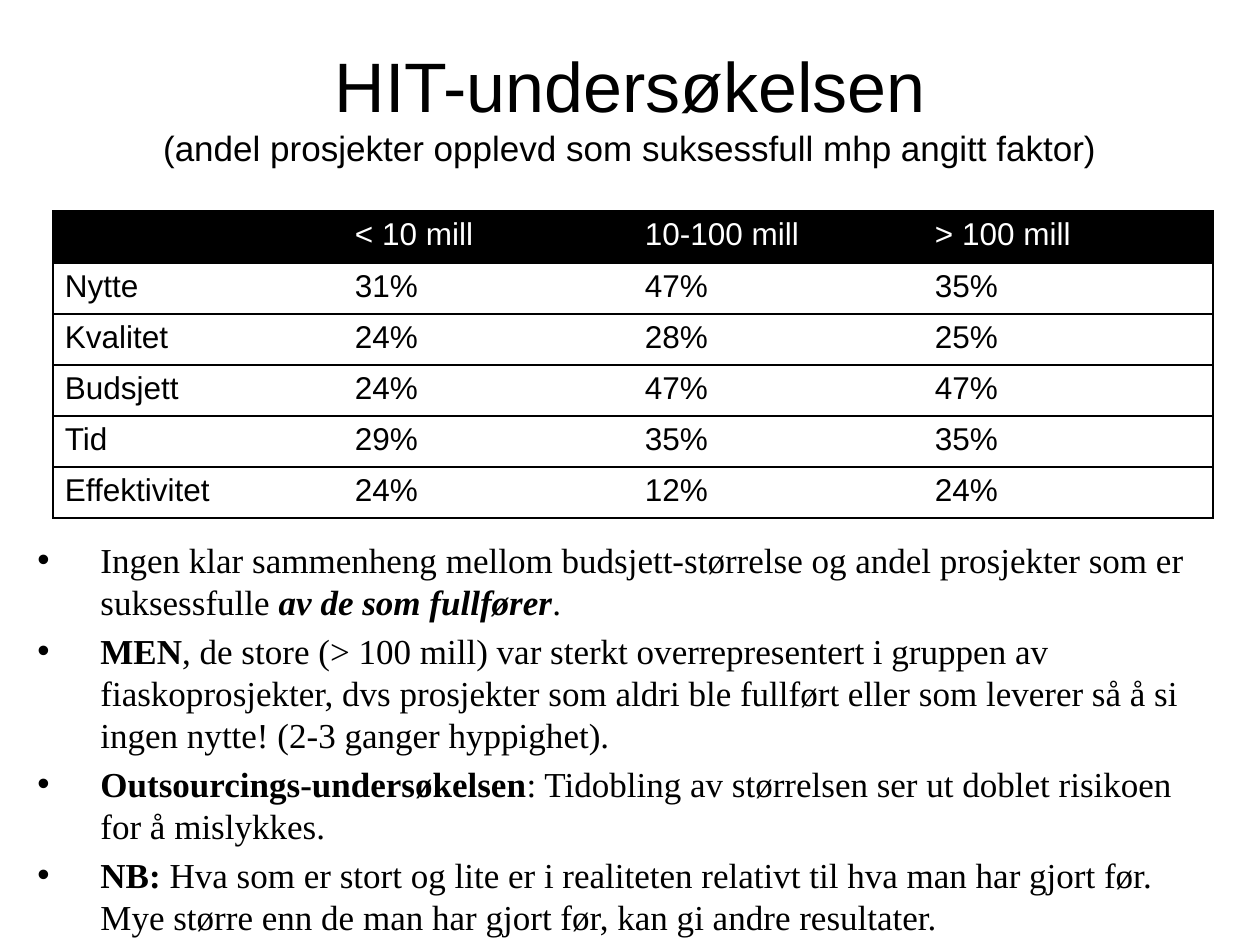
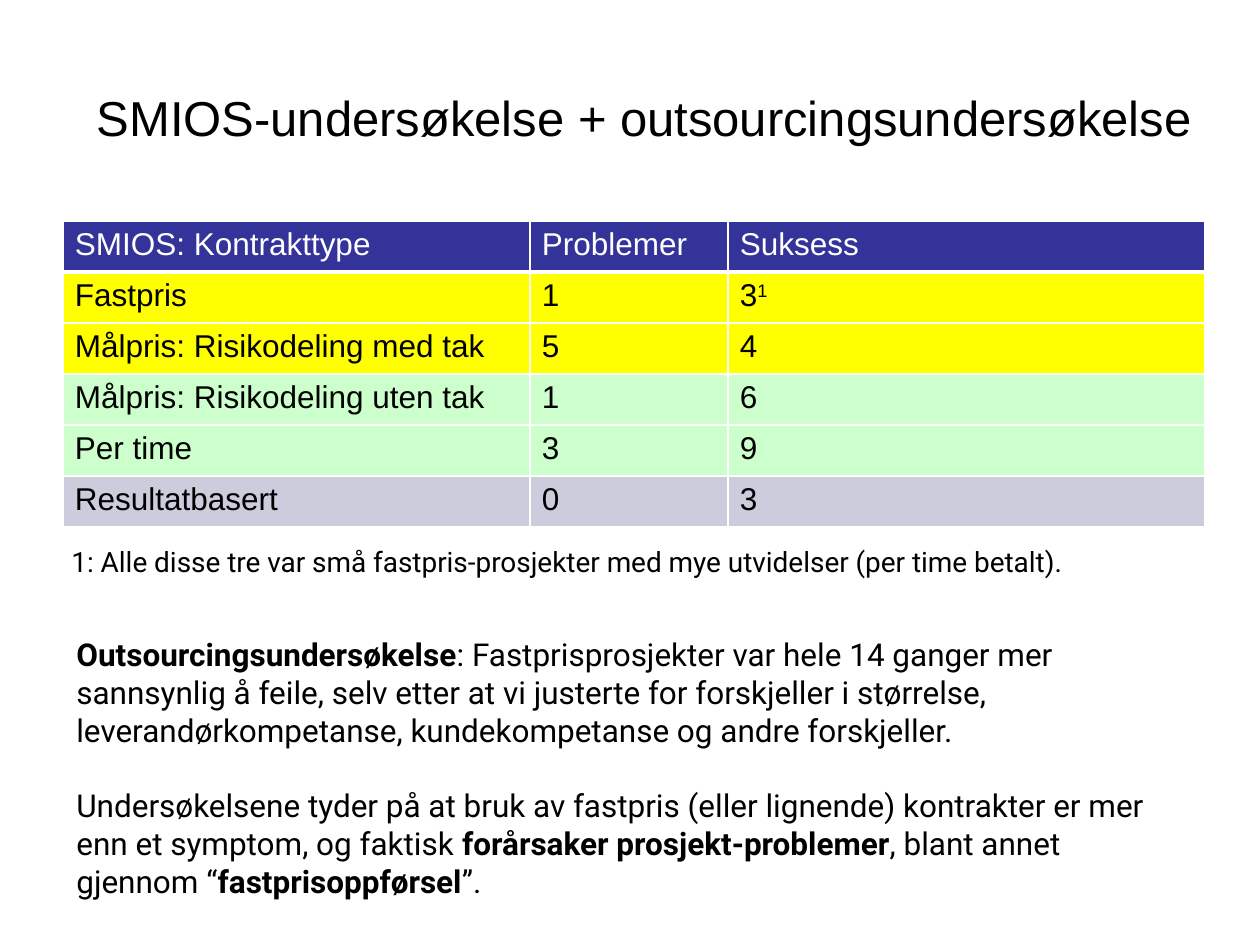
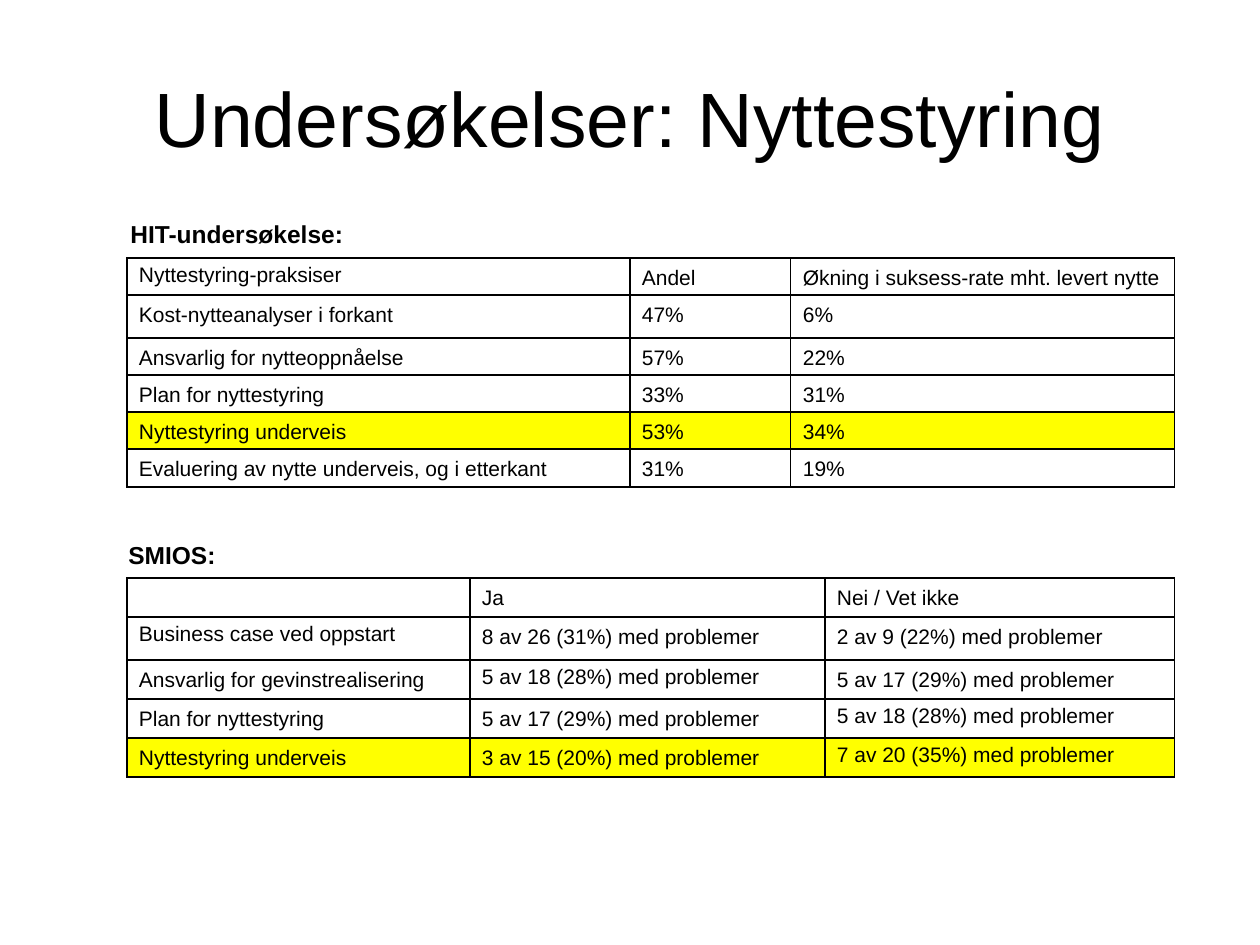
"""Build three slides of survey results on project success."""
import lxml.etree
import pptx
import pptx.dml.color
import pptx.enum.text
import pptx.oxml.ns
import pptx.util

SCALE = 914400 / 126
COLS = {"ink": "000000", "paper": "FFFFFF", "blue": "333399",
        "sun": "FFFF00", "mint": "CCFFCC", "mist": "CCCCDD"}
BOLD = {"bold": True}
BODY = {"name": "Times New Roman", "size": 20}
NOTE = {"name": "Roboto", "size": 18}
GRID = {"name": "Arial", "size": 18}
SMALL = {"name": "Arial", "size": 12}
HEAD = {"name": "Arial", "size": 14, "bold": True}
SIDES = {"l": "a:lnL", "r": "a:lnR", "t": "a:lnT", "b": "a:lnB"}


def px(num):
    """Turn pixels into EMU."""
    return pptx.util.Emu(round(num * SCALE))


def rgb(name):
    """Look up a named colour."""
    return pptx.dml.color.RGBColor.from_string(COLS[name])


def node(root, tag, **vals):
    """Add an XML child with attributes."""
    return lxml.etree.SubElement(root, pptx.oxml.ns.qn(tag), vals)


def assign(item, vals):
    """Set attributes from a dict."""
    for key, val in vals.items():
        setattr(item, key, val)


def write(par, parts, base, ink="ink"):
    """Write a string or a list of (text, format) parts as runs."""
    if isinstance(parts, str):
        parts = [(parts, {})]
    for text, extra in parts:
        if text == "\n":
            par.add_line_break()
            continue
        run = par.add_run()
        run.text = text
        look = {**base, **extra}
        assign(run.font, {**look, "size": pptx.util.Pt(look["size"])})
        run.font.color.rgb = rgb(ink)


def place(shape, box):
    """Move and size a shape."""
    assign(shape, dict(zip(("left", "top", "width", "height"), map(px, box))))


def start(deck, box, parts, size):
    """Add a slide with a formatted title."""
    slide = deck.slides.add_slide(deck.slide_layouts[5])
    title = slide.shapes.title
    place(title, box)
    assign(title.text_frame, {
        "word_wrap": True,
        "auto_size": pptx.enum.text.MSO_AUTO_SIZE.NONE,
        "vertical_anchor": pptx.enum.text.MSO_ANCHOR.MIDDLE,
        "margin_left": px(12), "margin_right": px(12),
        "margin_top": px(12), "margin_bottom": px(12)})
    par = title.text_frame.paragraphs[0]
    par.alignment = pptx.enum.text.PP_ALIGN.CENTER
    write(par, parts, {"name": "Arial", "size": size})
    return slide


def prose(slide, box, paras, base, gap=0, wrap=True):
    """Add a text box and return its paragraphs."""
    shape = slide.shapes.add_textbox(*map(px, box))
    frame = shape.text_frame
    frame.word_wrap = wrap
    for num, parts in enumerate(paras):
        par = frame.add_paragraph() if num else frame.paragraphs[0]
        par.space_before = pptx.util.Pt(gap if num else 0)
        write(par, parts, base)
    return frame.paragraphs


def bullet(par):
    """Give a paragraph a hanging bullet."""
    props = par._p.get_or_add_pPr()
    props.set("marL", str(px(63)))
    props.set("indent", str(px(-63)))
    node(props, "a:buFont", typeface="Arial")
    node(props, "a:buChar", char="•")


def border(cell, edges):
    """Draw the four cell edges; a missing edge is left open."""
    props = cell._tc.get_or_add_tcPr()
    for side, tag in SIDES.items():
        if side in edges:
            tint, width = edges[side]
            line = node(props, tag, w=str(pptx.util.Pt(width)))
            node(node(line, "a:solidFill"), "a:srgbClr", val=COLS[tint])
        else:
            node(node(props, tag, w="0"), "a:noFill")


def grid(slide, spot, wides, highs, rows, base, edge, fills,
         inks=(), inset=6, lead=None, tight=()):
    """Add a table with its own fills and edges."""
    frame = slide.shapes.add_table(
        len(rows), len(wides), *map(px, (*spot, sum(wides), sum(highs))))
    table = frame.table
    assign(table, {"first_row": False, "horz_banding": False})
    for col, wide in zip(table.columns, wides):
        col.width = px(wide)
    for row, high in zip(table.rows, highs):
        row.height = px(high)
    for at, row in enumerate(rows):
        for col, parts in enumerate(row):
            cell = table.cell(at, col)
            assign(cell, {"margin_left": px(12), "margin_right": px(12),
                          "margin_top": px(inset), "margin_bottom": px(inset)})
            border(cell, edge(at, col))
            if at in fills:
                cell.fill.solid()
                cell.fill.fore_color.rgb = rgb(fills[at])
            else:
                cell.fill.background()
            par = cell.text_frame.paragraphs[0]
            if lead and (at, col) not in tight:
                par.line_spacing = lead
            if parts:
                write(par, parts, base, "paper" if at in inks else "ink")
            else:
                node(par._p, "a:endParaRPr", sz=str(base["size"] * 100))
    return table


def frame_edge(row, col):
    """Rule rows and the outer frame only."""
    line = ("ink", 0.75)
    ends = {0: {"l": line}, 3: {"r": line}}
    return {"t": line, "b": line, **ends.get(col, {})}


def white_edge(row, col):
    """Rule all cells in white, heavier under the header."""
    edges = dict.fromkeys(SIDES, ("paper", 1))
    if row < 2:
        edges["t" if row else "b"] = ("paper", 3)
    return edges


def full_edge(row, col):
    """Rule all cells in black."""
    return dict.fromkeys(SIDES, ("ink", 0.75))


def size_slide(deck):
    """Show success by project size."""
    slide = start(deck, (53, 69, 1154, 73), [
        ("HIT-undersøkelsen", {}), ("\n", {}),
        ("(andel prosjekter opplevd som suksessfull mhp angitt faktor)",
         {"size": 20})], 40)
    rows = [("", "< 10 mill", "10-100 mill", "> 100 mill"),
            ("Nytte", "31%", "47%", "35%"),
            ("Kvalitet", "24%", "28%", "25%"),
            ("Budsjett", "24%", "47%", "47%"),
            ("Tid", "29%", "35%", "35%"),
            ("Effektivitet", "24%", "12%", "24%")]
    grid(slide, (53, 211), [290] * 4, [52] + [51] * 5, rows, GRID,
         frame_edge, {0: "ink"}, inks=(0,))
    paras = [
        [("Ingen klar sammenheng mellom budsjett-størrelse og andel "
          "prosjekter som er suksessfulle ", {}),
         ("av de som fullfører", {"bold": True, "italic": True}), (".", {})],
        [("MEN", BOLD),
         (", de store (> 100 mill) var sterkt overrepresentert i gruppen av "
          "fiaskoprosjekter, dvs prosjekter som aldri ble fullført eller som "
          "leverer så å si ingen nytte! (2-3 ganger hyppighet).", {})],
        [("Outsourcings-undersøkelsen", BOLD),
         (": Tidobling av størrelsen ser ut doblet risikoen for å mislykkes.",
          {})],
        [("NB:", BOLD),
         (" Hva som er stort og lite er i realiteten relativt til hva man har "
          "gjort før. Mye større enn de man har gjort før, kan gi andre "
          "resultater.", {})]]
    for par in prose(slide, (25, 532, 1189, 420), paras, BODY, gap=4):
        bullet(par)


def deal_slide(deck):
    """Show problems by contract type."""
    slide = start(deck, (45, 38, 1198, 158),
                  "SMIOS-undersøkelse + outsourcingsundersøkelse", 28)
    rows = [("SMIOS: Kontrakttype", "Problemer", "Suksess"),
            ("Fastpris", "1", [("3", {}), ("1", {})]),
            ("Målpris: Risikodeling med tak", "5", "4"),
            ("Målpris: Risikodeling uten tak", "1", "6"),
            ("Per time", "3", "9"),
            ("Resultatbasert", "0", "3")]
    fills = dict(enumerate(("blue", "sun", "sun", "mint", "mint", "mist")))
    table = grid(slide, (63, 221), [467, 198, 477], [51] * 6, rows, GRID,
                 white_edge, fills, inks=(0,))
    mark = table.cell(1, 2).text_frame.paragraphs[0].runs[1]
    mark._r.get_or_add_rPr().set("baseline", "30000")
    paras = [
        [("Outsourcingsundersøkelse", BOLD),
         (": Fastprisprosjekter var hele 14 ganger mer sannsynlig å feile, "
          "selv etter at vi justerte for forskjeller i størrelse, "
          "leverandørkompetanse, kundekompetanse og andre forskjeller.", {})],
        [("Undersøkelsene tyder på at bruk av fastpris (eller lignende) "
          "kontrakter er mer enn et symptom, og faktisk ", {}),
         ("forårsaker prosjekt-problemer", BOLD),
         (", blant annet gjennom “", {}), ("fastprisoppførsel", BOLD),
         ("”.", {})]]
    prose(slide, (64, 629, 1131, 267), paras, NOTE, gap=21.5)
    prose(slide, (59, 538, 1142, 50),
          ["1: Alle disse tre var små fastpris-prosjekter med mye utvidelser "
           "(per time betalt)."], {**NOTE, "size": 16})


def gain_slide(deck):
    """Show the effect of benefit management."""
    slide = start(deck, (63, 38, 1134, 158), "Undersøkelser: Nyttestyring", 44)
    hit = [("Nyttestyring-praksiser", "Andel",
            "Økning i suksess-rate mht. levert nytte"),
           ("Kost-nytteanalyser i forkant", "47%", "6%"),
           ("Ansvarlig for nytteoppnåelse", "57%", "22%"),
           ("Plan for nyttestyring", "33%", "31%"),
           ("Nyttestyring underveis", "53%", "34%"),
           ("Evaluering av nytte underveis, og i etterkant", "31%", "19%")]
    smios = [("", "Ja", "Nei / Vet ikke"),
             ("Business case ved oppstart", "8 av 26 (31%) med problemer",
              "2 av 9 (22%) med problemer"),
             ("Ansvarlig for gevinstrealisering", "5 av 18 (28%) med problemer",
              "5 av 17 (29%) med problemer"),
             ("Plan for nyttestyring", "5 av 17 (29%) med problemer",
              "5 av 18 (28%) med problemer"),
             ("Nyttestyring underveis", "3 av 15 (20%) med problemer",
              "7 av 20 (35%) med problemer")]
    shared = {"base": SMALL, "edge": full_edge, "fills": {4: "sun"},
              "inset": 5, "lead": 1.15}
    grid(slide, (127, 258), [503, 161, 384], [37, 43, 37, 37, 37, 38], hit,
         tight={(0, 0)}, **shared)
    grid(slide, (127, 578), [343, 355, 350], [39, 43, 39, 39, 39], smios,
         tight={(1, 0), (2, 1), (3, 2), (4, 2)}, **shared)
    prose(slide, (118, 213, 241, 43), ["HIT-undersøkelse:"], HEAD, wrap=False)
    prose(slide, (116, 534, 113, 43), ["SMIOS:"], HEAD, wrap=False)


def main():
    """Build and save the deck."""
    deck = pptx.Presentation()
    assign(deck, {"slide_width": px(1260), "slide_height": px(945)})
    size_slide(deck)
    deal_slide(deck)
    gain_slide(deck)
    deck.save("out.pptx")


if __name__ == "__main__":
    main()
